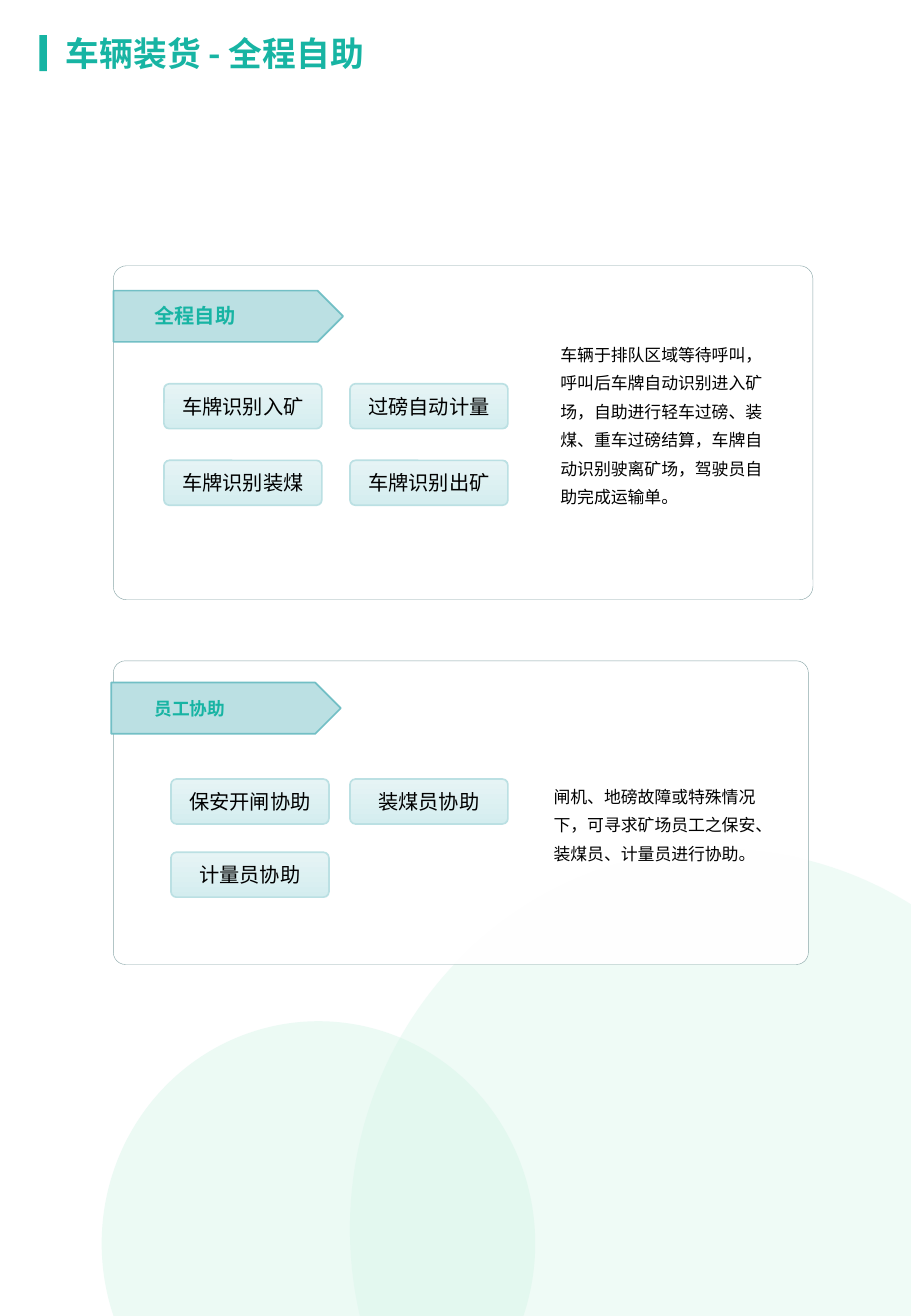
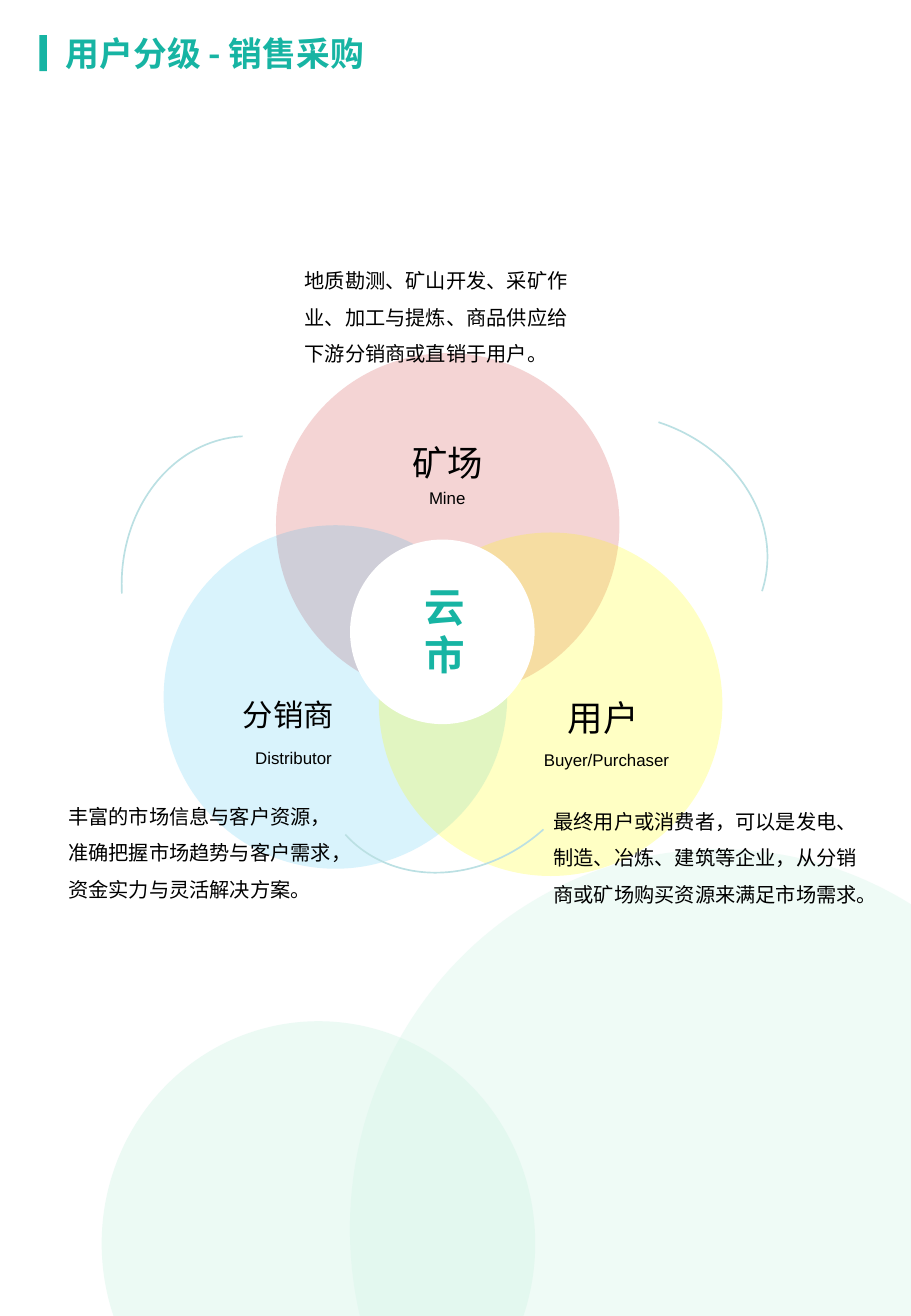
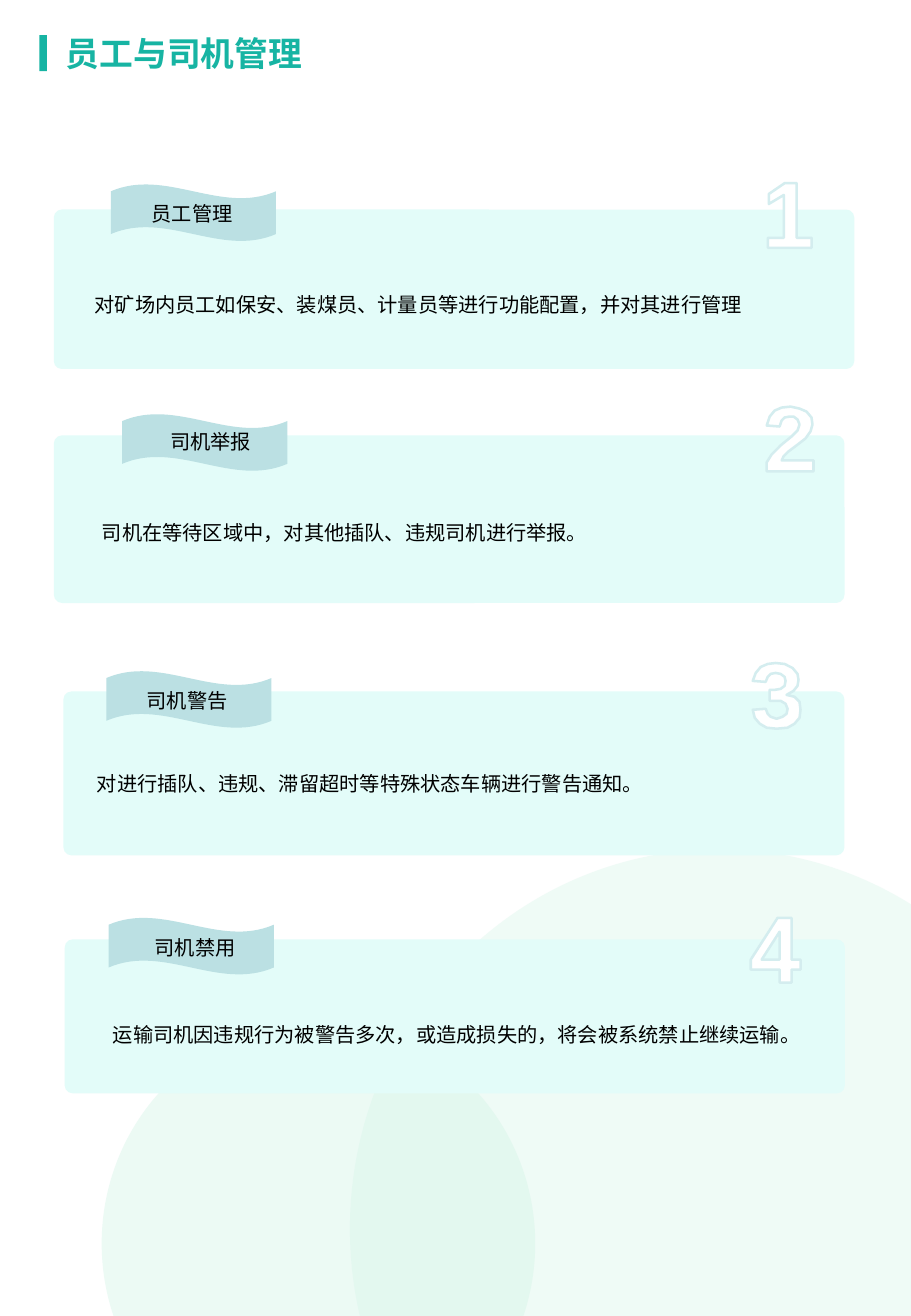
from lxml.etree import SubElement
from pptx import Presentation
from pptx.dml.color import RGBColor
from pptx.enum.shapes import MSO_SHAPE as Kind
from pptx.enum.text import MSO_ANCHOR, PP_ALIGN
from pptx.oxml.ns import qn
from pptx.util import Pt

HUES = {
    "teal": "17B4A3", "mint": "D3F4E7", "white": "FFFFFF", "black": "000000",
    "aqua": "BBE0E3", "edge": "72BFC5", "gray": "8AA6A8", "pale": "E3FCF9",
    "light": "E6F4F5", "deep": "D4EDEF", "red": "C00000", "blue": "00B0F0",
    "gold": "FFFF00",
}
SANS = "Noto Sans CJK SC"
ONE = [[(2, 65), (2, 55), (18, 55), (18, 12), (3, 21), (3, 11), (19, 0),
        (31, 0), (31, 55), (46, 55), (46, 65)]]
TWO = [[(0, 65), (0, 56), (5, 48), (14, 39), (25, 30), (31, 24), (33, 18),
        (31, 13), (27, 10.5), (23, 10), (18, 11), (15, 14), (13, 20), (0, 19),
        (3, 10), (8, 4), (15, 1), (24, 0), (33, 1.5), (40, 5), (45, 11),
        (46, 18), (44, 25), (39, 32), (30, 39), (22, 45), (17, 50),
        (15, 54.5), (47, 54.5), (47, 65)]]
THREE = [[(0, 47), (13, 46), (15, 51), (18, 54.5), (24, 56), (30, 54.5),
          (34, 51), (35, 46.5), (33, 41), (28, 38), (22, 37.5), (17, 37.5),
          (17, 27), (22, 27), (28, 26), (32, 23), (33, 18.5), (32, 14),
          (28, 11), (23, 10), (18, 11), (15, 14), (13, 19), (0, 18), (3, 10),
          (8, 4), (15, 1), (23, 0), (32, 1), (40, 5), (45, 11), (46, 17),
          (45, 23), (41, 28), (34, 32), (42, 34), (47, 39), (48.5, 47),
          (47, 55), (42, 61), (35, 65), (24, 66), (14, 65), (7, 61),
          (2, 55)]]
FOUR = [[(41, 52), (41, 65), (29, 65), (29, 52), (0, 52), (0, 42), (27, 0),
         (41, 0), (41, 42), (50, 42), (50, 52)],
        [(29, 42), (29, 14), (11, 42)]]


def tint(name):
    """Return the named colour."""
    return RGBColor.from_string(HUES[name])


class Deck:
    """Holds the style and the current slide."""

    def __init__(self):
        """Start a portrait deck."""
        self.prs = Presentation()
        self.prs.slide_width, self.prs.slide_height = Pt(540), Pt(780)

    def page(self, title):
        """Add a slide with its backdrop and title."""
        self.slide = self.prs.slides.add_slide(self.prs.slide_layouts[6])
        self.shape(Kind.OVAL, 207.4, 503.3, 437.8, 450, "mint", 34)
        self.shape(Kind.OVAL, 60.3, 605.3, 257, 263.5, "mint", 42)
        self.shape(Kind.RECTANGLE, 23.3, 20.9, 4.5, 21.3, "teal")
        self.text(title, 31.9, 15.8, 257, 31.7, 20, "teal", bold=True)

    def paint(self, item, fill, line, width):
        """Set plain fill and line, without shadow."""
        item.shadow.inherit = False
        if fill:
            item.fill.solid()
            item.fill.fore_color.rgb = tint(fill)
        else:
            item.fill.background()
        if line:
            item.line.color.rgb = tint(line)
            item.line.width = Pt(width)
        else:
            item.line.fill.background()

    def shape(self, kind, x, y, w, h, fill=None, alpha=100, line=None,
              width=1, adj=None):
        """Add a preset shape."""
        item = self.slide.shapes.add_shape(kind, Pt(x), Pt(y), Pt(w), Pt(h))
        self.paint(item, fill, line, width)
        if adj is not None:
            item.adjustments[0] = adj
        if alpha < 100:
            hue = item.fill._xPr.find(".//" + qn("a:srgbClr"))
            SubElement(hue, qn("a:alpha"), val=str(alpha * 1000))
        return item

    def style(self, para, size, hue="black", bold=False, face=SANS):
        """Set the font of a paragraph."""
        font = para.font
        font.size, font.bold, font.name = Pt(size), bold, face
        font.color.rgb = tint(hue)
        base = para._p.pPr.find(qn("a:defRPr"))
        SubElement(base, qn("a:ea"), typeface=face)

    def text(self, words, x, y, w, h, size=12, hue="black", bold=False,
             face=SANS, space=None):
        """Add a wrapped text box."""
        box = self.slide.shapes.add_textbox(Pt(x), Pt(y), Pt(w), Pt(h))
        box.text_frame.word_wrap = True
        para = box.text_frame.paragraphs[0]
        para.text = words
        if space:
            para.line_spacing = space
        self.style(para, size, hue, bold, face)

    def chip(self, words, x, y):
        """Add a shaded button."""
        item = self.shape(Kind.ROUNDED_RECTANGLE, x, y, 93.6, 26.6,
                          line="aqua", adj=0.12)
        item.fill.gradient()
        item.fill.gradient_angle = 270
        for stop, hue in zip(item.fill.gradient_stops, ("light", "deep")):
            stop.color.rgb = tint(hue)
        frame = item.text_frame
        frame.vertical_anchor = MSO_ANCHOR.MIDDLE
        para = frame.paragraphs[0]
        para.text = words
        para.alignment = PP_ALIGN.CENTER
        self.style(para, 12)

    def frame(self, y, w, h):
        """Add an outlined panel."""
        self.shape(Kind.ROUNDED_RECTANGLE, 67.2, y, w, h, "white", 98, "gray",
                   0.25, 0.04)

    def plate(self, words, x, y, top, size):
        """Add a pointed label."""
        self.shape(Kind.PENTAGON, x, y, 136.1, 30.4, "aqua", line="edge")
        self.text(words, 84.5, top, 86.4, 21.6, size, "teal", True)

    def arc(self, x, y, turn):
        """Add a mirrored quarter arc."""
        item = self.shape(Kind.ARC, x, y, 152.6, 178.6, line="aqua")
        item.rotation = turn
        item._element.spPr.xfrm.set("flipH", "1")

    def digit(self, rings, x, y):
        """Add a large outlined numeral."""
        pen = self.slide.shapes.build_freeform(*rings[0][0], scale=Pt(0.59))
        pen.add_line_segments(rings[0][1:])
        for ring in rings[1:]:
            pen.move_to(*ring[0])
            pen.add_line_segments(ring[1:])
        item = pen.convert_to_shape(Pt(x), Pt(y))
        self.paint(item, "white", "deep", 1.5)


def load(deck):
    """Build the loading slide."""
    deck.page("车辆装货 - 全程自助")
    deck.frame(157.5, 414.7, 198)
    deck.frame(391.7, 412, 180)
    deck.plate("全程自助", 67.3, 172.3, 176.2, 12)
    deck.plate("员工协助", 65.9, 404.6, 409.9, 10.5)
    for words, x, y in (
            ("车牌识别入矿", 97.2, 227.5), ("过磅自动计量", 207.5, 227.5),
            ("车牌识别装煤", 97.2, 272.9), ("车牌识别出矿", 207.5, 272.9),
            ("保安开闸协助", 101.4, 461.8), ("装煤员协助", 207.5, 461.8),
            ("计量员协助", 101.4, 505.2)):
        deck.chip(words, x, y)
    deck.text("车辆于排队区域等待呼叫，呼叫后车牌自动识别进入矿场，自助进行轻车过磅、"
              "装煤、重车过磅结算，车牌自动识别驶离矿场，驾驶员自助完成运输单。",
              325.1, 196, 137.5, 152.6, 10, space=1.4)
    deck.text("闸机、地磅故障或特殊情况下，可寻求矿场员工之保安、装煤员、计量员进行协助。",
              321.1, 457.9, 134.6, 98.6, 10, space=1.4)


def users(deck):
    """Build the user roles slide."""
    deck.page("用户分级 - 销售采购")
    for x, y, hue, alpha in ((163.6, 209.3, "red", 17),
                             (97, 311.3, "blue", 15),
                             (224.6, 315.6, "gold", 23)):
        deck.shape(Kind.OVAL, x, y, 203.6, 203.6, hue, alpha)
    deck.shape(Kind.OVAL, 207.5, 319.8, 109.4, 109.4, "white")
    deck.text("云市", 244.8, 341.3, 44.6, 65.5, 24, "teal", True)
    for words, x, y, w, size in (("矿场", 237.4, 257.8, 57.6, 21),
                                 ("分销商", 136.8, 409, 78.5, 18),
                                 ("用户", 329.5, 409, 57.6, 21)):
        deck.text(words, x, y, w, 32.4, size)
    for words, x, y, w in (("Mine", 247.2, 285.4, 42.5),
                           ("Distributor", 144.2, 439.5, 74.9),
                           ("Buyer/Purchaser", 315.3, 440.7, 93.6)):
        deck.text(words, x, y, w, 19.4, 10, face="Arial")
    for words, x, y, w in (
            ("地质勘测、矿山开发、采矿作业、加工与提炼、商品供应给下游分销商或直销于用户。",
             173.5, 148.3, 180),
            ("丰富的市场信息与客户资源，准确把握市场趋势与客户需求，资金实力与灵活解决方案。",
             33.4, 466, 180),
            ("最终用户或消费者，可以是发电、制造、冶炼、建筑等企业，从分销商或矿场购买资源来满足市场需求。",
             321, 468.9, 195.1)):
        deck.text(words, x, y, w, 75.6, space=1.5)
    for x, y, turn in ((72.2, 258.5, 357), (290.5, 233.5, 108),
                       (194.8, 345.6, 228)):
        deck.arc(x, y, turn)


def staff(deck):
    """Build the staff and driver slide."""
    deck.page("员工与司机管理")
    rows = (
        ("员工管理", "对矿场内员工如保安、装煤员、计量员等进行功能配置，并对其进行管理",
         (31.9, 124.2, 474.5, 94.5), (65.7, 109.2), (82.8, 115.5),
         (49, 164.2), ONE, (454, 108.5)),
        ("司机举报", "司机在等待区域中，对其他插队、违规司机进行举报。",
         (31.9, 258, 468.7, 99.4), (72.4, 245.4), (93.8, 251),
         (53.3, 299.2), TWO, (454.5, 241)),
        ("司机警告", "对进行插队、违规、滞留超时等特殊状态车辆进行警告通知。",
         (37.6, 409.8, 463, 97.2), (63, 397.7), (79.9, 404.6),
         (50.4, 447.8), THREE, (446.2, 393)),
        ("司机禁用", "运输司机因违规行为被警告多次，或造成损失的，将会被系统禁止继续运输。",
         (38.4, 556.8, 462.4, 91.2), (64.4, 543.9), (84.6, 550.8),
         (59.8, 596.5), FOUR, (445, 544)),
    )
    for name, words, card, wave, label, body, rings, mark in rows:
        deck.shape(Kind.ROUNDED_RECTANGLE, *card, "pale", adj=0.05)
        deck.shape(Kind.WAVE, *wave, 97.9, 33.8, "aqua")
        deck.text(name, *label, 68.4, 21.6)
        deck.text(words, *body, 441, 27.4, space=1.4)
        deck.digit(rings, *mark)


def main():
    """Build and save the deck."""
    deck = Deck()
    for build in (load, users, staff):
        build(deck)
    deck.prs.save("out.pptx")


if __name__ == "__main__":
    main()
